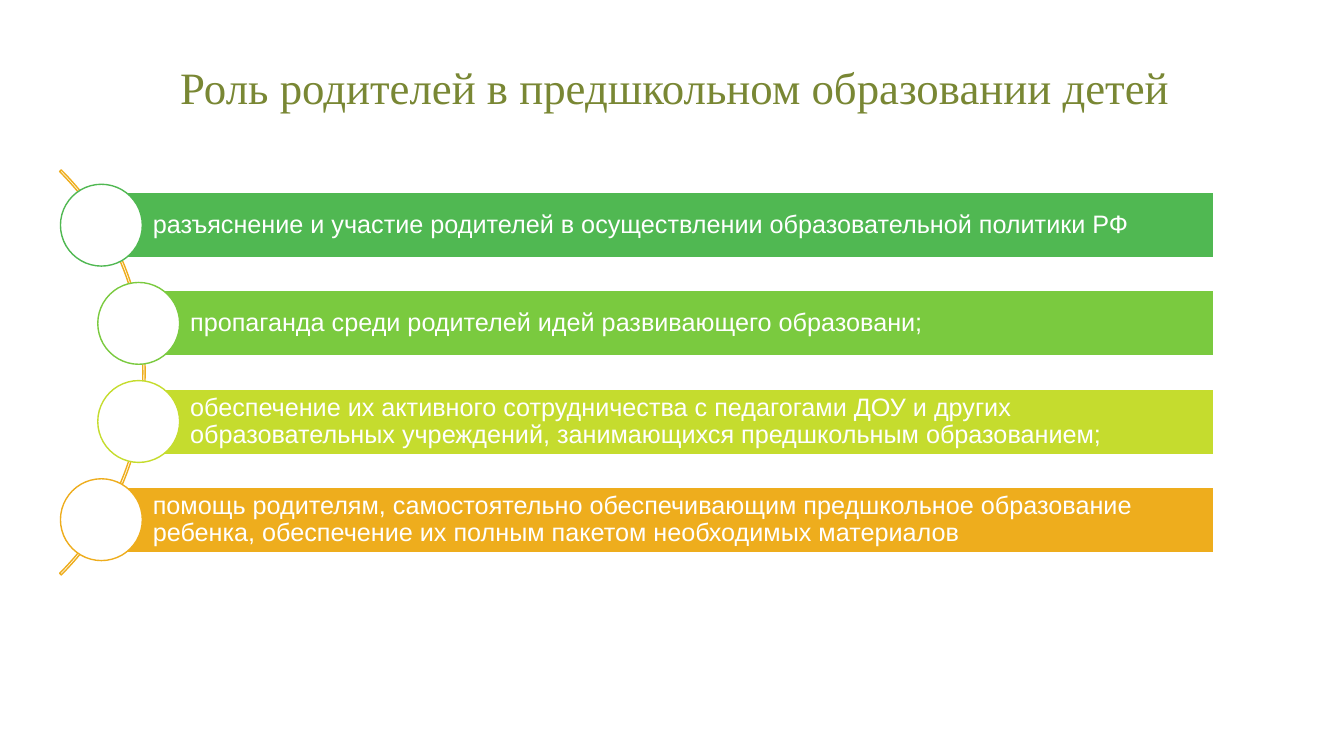
from pptx import Presentation
from pptx import util as u
from pptx.dml.color import RGBColor
from pptx.enum import shapes, text

COLOURS = {
    "title": "798734",
    "white": "FFFFFF",
    "green": "50B852",
    "lime": "7ACA3F",
    "yellow": "C5DC2E",
    "orange": "EEAD1D",
}
TITLE = "Роль родителей в предшкольном образовании детей"
ROLES = [
    ("green", 0, "разъяснение и участие родителей в осуществлении образовательной политики РФ"),
    ("lime", 0.37, "пропаганда среди родителей идей развивающего образовани;"),
    ("yellow", 0.37, "обеспечение их активного сотрудничества с педагогами ДОУ и других "
     "образовательных учреждений, занимающихся предшкольным образованием;"),
    ("orange", 0, "помощь родителям, самостоятельно обеспечивающим предшкольное образование "
     "ребенка, обеспечение их полным пакетом необходимых материалов"),
]


def colour(name):
    """Return the named colour of the palette."""
    return RGBColor.from_string(COLOURS[name])


def add_title(page, left, top, width, height):
    """Place the slide title in the given box."""
    title = page.shapes.title
    title.left, title.top = u.Inches(left), u.Inches(top)
    title.width, title.height = u.Inches(width), u.Inches(height)
    frame = title.text_frame
    frame.text = TITLE
    frame.auto_size = text.MSO_AUTO_SIZE.NONE
    frame.vertical_anchor = text.MSO_ANCHOR.BOTTOM
    para = frame.paragraphs[0]
    para.alignment = text.PP_ALIGN.CENTER
    para.line_spacing = 0.9
    para.font.name, para.font.size = "Times New Roman", u.Pt(32)
    para.font.color.rgb = colour("title")


def add_outlined(page, kind, left, top, width, height, fill, line):
    """Add a flat preset shape with a one-point outline."""
    shape = page.shapes.add_shape(kind, *map(u.Inches, (left, top, width, height)))
    shape.shadow.inherit = False
    if fill:
        shape.fill.solid()
        shape.fill.fore_color.rgb = colour(fill)
    else:
        shape.fill.background()
    shape.line.color.rgb = colour(line)
    shape.line.width = u.Pt(1)
    return shape


def write_role(bar, words, inset):
    """Write one role in its bar, clear of the circle."""
    frame = bar.text_frame
    frame.text = words
    frame.word_wrap = True
    frame.vertical_anchor = text.MSO_ANCHOR.MIDDLE
    frame.margin_left = u.Inches(inset)
    frame.margin_top = frame.margin_right = frame.margin_bottom = u.Inches(0.05)
    para = frame.paragraphs[0]
    para.alignment = text.PP_ALIGN.LEFT
    para.line_spacing = 0.9
    para.font.name, para.font.size = "Arial", u.Pt(18)
    para.font.color.rgb = colour("white")


def add_roles(page, left, top, width, height):
    """Hang one bar and circle per role on an arc in the given box."""
    pitch = height / (len(ROLES) + 1)
    bar_height, circle = pitch * 2 / 3, pitch * 5 / 6
    arc_size = height * 7 / 6
    arc = add_outlined(page, shapes.MSO_SHAPE.BLOCK_ARC, left + 0.84 - arc_size,
                       top + (height - arc_size) / 2, arc_size, arc_size, None, "orange")
    for index, value in enumerate((189, 27, 0.004)):
        arc.adjustments[index] = value
    for row, (shade, indent, words) in enumerate(ROLES, start=1):
        middle = top + row * pitch
        start = left + circle / 2 + indent
        bar = add_outlined(page, shapes.MSO_SHAPE.RECTANGLE, start, middle - bar_height / 2,
                           left + width - start, bar_height, shade, "white")
        write_role(bar, words, 0.51)
        add_outlined(page, shapes.MSO_SHAPE.OVAL, start - circle / 2, middle - circle / 2,
                     circle, circle, "white", shade)


def main():
    """Build the deck and save it."""
    deck = Presentation()
    deck.slide_width, deck.slide_height = u.Inches(13.33), u.Inches(7.5)
    page = deck.slides.add_slide(deck.slide_layouts[5])
    add_title(page, 1.32, 0, 10.75, 1.18)
    add_roles(page, 0.6, 1.26, 11.44, 4.87)
    deck.save("out.pptx")


if __name__ == "__main__":
    main()
